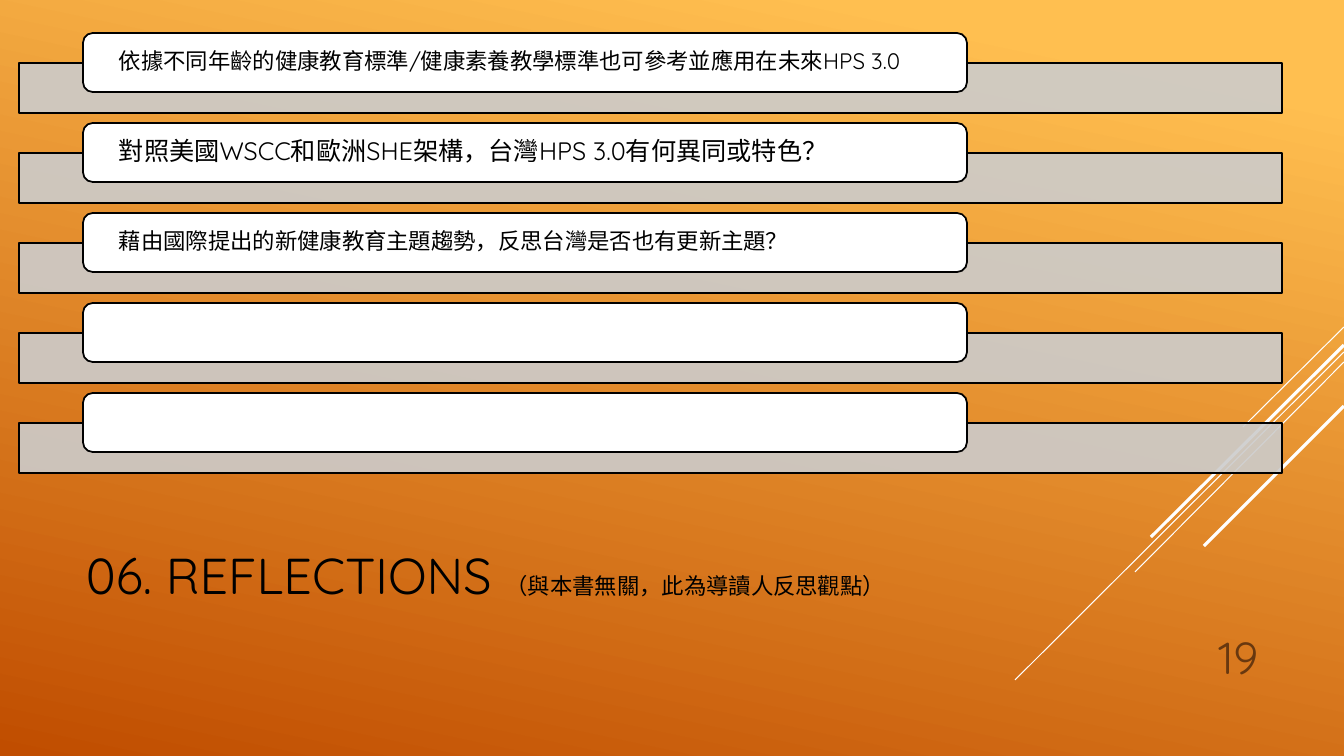
from lxml.etree import SubElement
from pptx import Presentation
from pptx.dml.color import RGBColor
from pptx.enum.shapes import MSO_CONNECTOR, MSO_SHAPE
from pptx.enum.text import MSO_ANCHOR, PP_ALIGN
from pptx.oxml.ns import qn
from pptx.util import Emu, Pt

PX = 914400 / 100.8
FONT = "Quicksand"
BLACK = RGBColor(0x00, 0x00, 0x00)
WHITE = RGBColor(0xFF, 0xFF, 0xFF)
GREY = RGBColor(0xCC, 0xCC, 0xCC)
BROWN = RGBColor(0x68, 0x38, 0x0F)
AMBER = RGBColor(0xFF, 0xBF, 0x50)
RUST = RGBColor(0xC0, 0x4D, 0x00)

RAYS = [
    (327, 1243, 427, 0.75),
    (352, 1015, 680, 0.75),
    (362, 1135, 572, 0.75),
    (345, 1151, 537, 2.25),
    (406, 1204, 546, 2.25),
]
QUESTIONS = [
    ("依據不同年齡的健康教育標準/健康素養教學標準也可參考並應用在未來HPS 3.0", 16),
    ("對照美國WSCC和歐洲SHE架構，台灣HPS 3.0有何異同或特色？", 18),
    ("藉由國際提出的新健康教育主題趨勢，反思台灣是否也有更新主題？", 16),
    ("", 16),
    ("", 16),
]
ROW_PITCH = 90


def px(*lengths):
    return [Emu(round(length * PX)) for length in lengths]


class SlideBuilder:
    """Draws styled elements on one slide, with lengths in px."""

    def __init__(self, presentation):
        layout = presentation.slide_layouts[6]
        self.slide = presentation.slides.add_slide(layout)
        self.shapes = self.slide.shapes

    def background(self, start, end, clockwise_angle):
        fill = self.slide.background.fill
        fill.gradient()
        fill.gradient_angle = 360 - clockwise_angle
        for stop, color, position in zip(fill.gradient_stops, (start, end), (0.1, 1)):
            stop.color.rgb = color
            stop.position = position

    def line(self, x1, y1, x2, y2, width):
        connector = self.shapes.add_connector(MSO_CONNECTOR.STRAIGHT, *px(x1, y1, x2, y2))
        connector.line.color.rgb = WHITE
        connector.line.width = Pt(width)
        SubElement(connector._element.spPr, qn("a:effectLst"))

    def box(self, kind, bounds, color, opacity=100):
        shape = self.shapes.add_shape(kind, *px(*bounds))
        shape.shadow.inherit = False
        shape.fill.solid()
        shape.fill.fore_color.rgb = color
        if opacity < 100:
            color_element = shape._element.spPr.find(qn("a:solidFill"))[0]
            SubElement(color_element, qn("a:alpha"), val=str(opacity * 1000))
        shape.line.color.rgb = BLACK
        shape.line.width = Pt(1.25)
        return shape

    def add_runs(self, shape, runs, color=BLACK, align=PP_ALIGN.LEFT, anchor=MSO_ANCHOR.MIDDLE):
        frame = shape.text_frame
        frame.word_wrap = True
        frame.vertical_anchor = anchor
        paragraph = frame.paragraphs[0]
        paragraph.alignment = align
        paragraph.line_spacing = 0.9
        for text, size in runs:
            run = paragraph.add_run()
            run.text = text
            run.font.name = FONT
            run.font.size = Pt(size)
            run.font.color.rgb = color

    def text(self, bounds, runs, **style):
        self.add_runs(self.shapes.add_textbox(*px(*bounds)), runs, **style)

    def question(self, top, text, size):
        self.box(MSO_SHAPE.RECTANGLE, (19, top + 30, 1263, 50), GREY, opacity=90)
        card = self.box(MSO_SHAPE.ROUNDED_RECTANGLE, (83, top, 884, 59), WHITE)
        if text:
            frame = card.text_frame
            frame.margin_left, frame.margin_right = px(33, 33)
            frame.margin_top = frame.margin_bottom = 0
            self.add_runs(card, [(text, size)])


def main():
    presentation = Presentation()
    presentation.slide_width, presentation.slide_height = px(1344, 756)
    builder = SlideBuilder(presentation)
    builder.background(AMBER, RUST, 102)
    for start_y, end_x, end_y, width in RAYS:
        builder.line(1344, start_y, end_x, end_y, width)
    builder.text(
        (76, 495, 940, 166),
        [("06. REFLECTIONS ", 36), ("（與本書無關，此為導讀人反思觀點）", 16)],
    )
    builder.text(
        (1142, 615, 126, 74),
        [("19", 32)],
        color=BROWN,
        align=PP_ALIGN.RIGHT,
        anchor=MSO_ANCHOR.BOTTOM,
    )
    for row, (text, size) in enumerate(QUESTIONS):
        builder.question(33 + row * ROW_PITCH, text, size)
    presentation.save("out.pptx")


if __name__ == "__main__":
    main()
